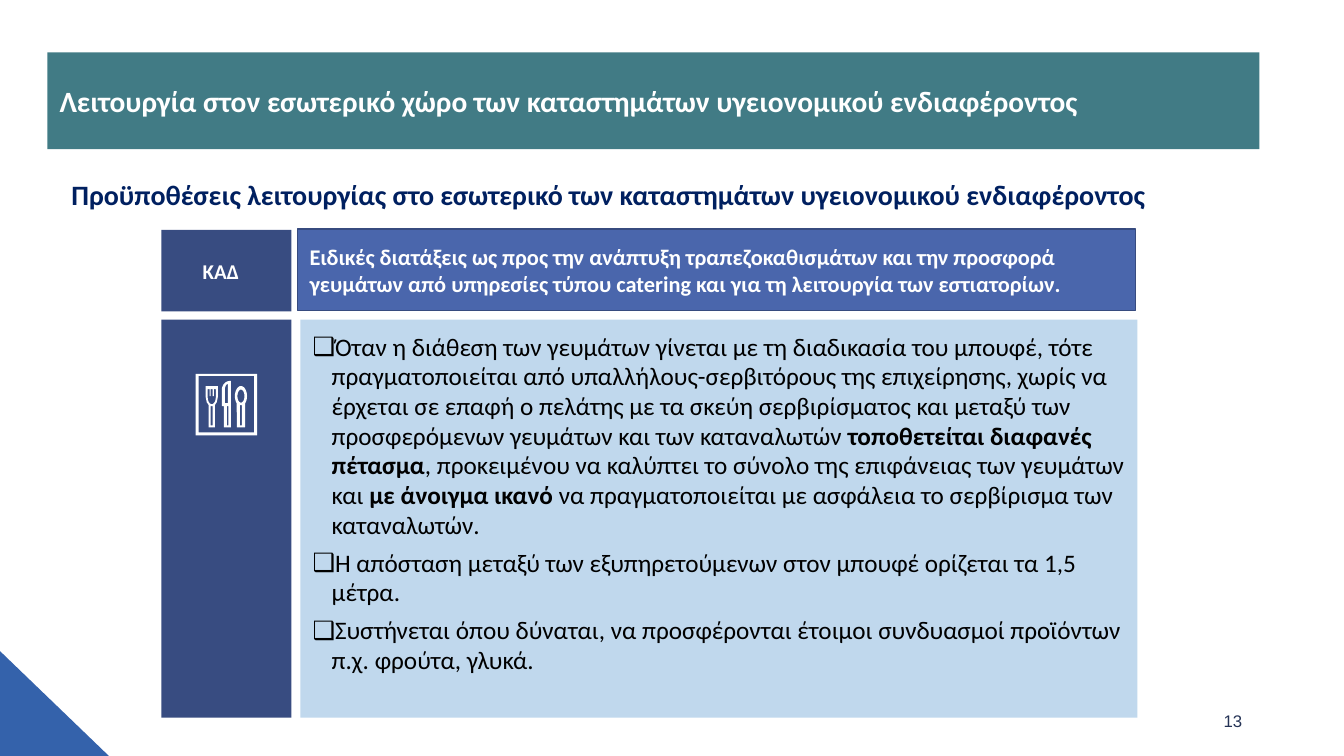
from math import cos, radians, sin

from lxml import etree
from pptx import Presentation, util as u
from pptx.dml.color import RGBColor
from pptx.enum import shapes, text
from pptx.oxml.ns import qn

WHITE, NAVY, DARK = "FFFFFF", "002060", "384C81"
TITLE = "Λειτουργία στον εσωτερικό χώρο των καταστημάτων υγειονομικού ενδιαφέροντος"
HEADING = "Προϋποθέσεις λειτουργίας στο εσωτερικό των καταστημάτων υγειονομικού ενδιαφέροντος"
RULES = ("Eιδικές διατάξεις ως προς την ανάπτυξη τραπεζοκαθισμάτων και την προσφορά "
         "γευμάτων από υπηρεσίες τύπου catering και για τη λειτουργία των εστιατορίων.")
# Text between asterisks is bold.
POINTS = [
    "Όταν η διάθεση των γευμάτων γίνεται με τη διαδικασία του μπουφέ, τότε "
    "πραγματοποιείται από υπαλλήλους-σερβιτόρους της επιχείρησης, χωρίς να έρχεται "
    "σε επαφή ο πελάτης με τα σκεύη σερβιρίσματος και μεταξύ των προσφερόμενων "
    "γευμάτων και των καταναλωτών *τοποθετείται διαφανές πέτασμα*, προκειμένου να "
    "καλύπτει το σύνολο της επιφάνειας των γευμάτων και *με άνοιγμα ικανό *να "
    "πραγματοποιείται με ασφάλεια το σερβίρισμα των καταναλωτών.",
    "Η απόσταση μεταξύ των εξυπηρετούμενων στον μπουφέ ορίζεται τα 1,5 μέτρα.",
    "Συστήνεται όπου δύναται, να προσφέρονται έτοιμοι συνδυασμοί προϊόντων "
    "π.χ. φρούτα, γλυκά.",
]


def paint(item, color):
    """Give a fill or font colour a solid hex value."""
    if hasattr(item, "solid"):
        item.solid()
        item.fore_color.rgb = RGBColor.from_string(color)
    else:
        item.color.rgb = RGBColor.from_string(color)


def place(shape, box):
    shape.left, shape.top, shape.width, shape.height = map(u.Inches, box)


def frame(shape, insets, anchor=text.MSO_ANCHOR.MIDDLE):
    """Set wrapping, margins and anchor, and return the text frame."""
    tf = shape.text_frame
    tf.word_wrap = True
    tf.auto_size = text.MSO_AUTO_SIZE.NONE
    tf.vertical_anchor = anchor
    tf.margin_left, tf.margin_top, tf.margin_right, tf.margin_bottom = map(u.Inches, insets)
    return tf


def style(para, size, color, bold=True, face="Calibri", align=text.PP_ALIGN.LEFT):
    para.alignment = align
    for run in para.runs:
        font = run.font
        font.name, font.size, font.bold = face, u.Pt(size), bold
        paint(font, color)


def write(shape, words, insets, size, color, **look):
    tf = frame(shape, insets)
    tf.text = words
    style(tf.paragraphs[0], size, color, **look)


def block(slide, box, color, kind=shapes.MSO_SHAPE.RECTANGLE, edge=None):
    shape = slide.shapes.add_shape(kind, *map(u.Inches, box))
    shape.shadow.inherit = False
    paint(shape.fill, color)
    if edge:
        paint(shape.line.fill, edge)
        shape.line.width = u.Pt(1)
    else:
        shape.line.fill.background()
    return shape


def label(slide, box, words, size, color, **look):
    shape = slide.shapes.add_textbox(*map(u.Inches, box))
    write(shape, words, (0.1, 0.05, 0.1, 0.05), size, color, **look)


def banner(title):
    place(title, (0.47, 0.52, 12.02, 0.96))
    geom = etree.SubElement(title._element.spPr, qn("a:prstGeom"), prst="snip2DiagRect")
    etree.SubElement(geom, qn("a:avLst"))
    paint(title.fill, "417B85")
    write(title, TITLE, (0.12, 0.02, 0.12, 0.02), 21, WHITE)


def bullet(para, mark):
    props = para._p.get_or_add_pPr()
    props.set("marL", str(u.Inches(0.19)))
    props.set("indent", str(u.Inches(-0.19)))
    etree.SubElement(props, qn("a:buFont"), typeface="Calibri")
    etree.SubElement(props, qn("a:buChar"), char=mark)


def checks(body):
    place(body, (2.98, 3.17, 8.3, 3.95))
    paint(body.fill, "C0D8ED")
    tf = frame(body, (0.12, 0.13, 0.08, 0.06), text.MSO_ANCHOR.TOP)
    for i, point in enumerate(POINTS):
        para = tf.add_paragraph() if i else tf.paragraphs[0]
        bullet(para, "❑")
        para.space_before = u.Pt(3 if i else 0)
        para.space_after = u.Pt(3)
        para.line_spacing = 0.98
        for part in point.split("*"):
            para.add_run().text = part
        style(para, 18, "000000", bold=False)
        for run in para.runs[1::2]:
            run.font.bold = True


def rect(left, top, right, bottom):
    return [(left, top), (right, top), (right, bottom), (left, bottom)]


def arc(x, y, wide, high, start, end):
    """Points along an ellipse, from one angle to another."""
    turns = [radians(start + (end - start) * i / 24) for i in range(25)]
    return [(x + wide * cos(t), y + high * sin(t)) for t in turns]


def outline(slide, *rings):
    """Draw a white form: its outer ring, then its holes."""
    rings = [[(u.Inches(x), u.Inches(y)) for x, y in ring] for ring in rings]
    pen = slide.shapes.build_freeform(*rings[0][0])
    for i, ring in enumerate(rings):
        if i:
            pen.move_to(*ring[0])
        pen.add_line_segments(ring[1:], close=True)
    form = pen.convert_to_shape()
    form.shadow.inherit = False
    paint(form.fill, WHITE)
    form.line.fill.background()


def cutlery(slide):
    outline(slide, rect(1.94, 3.71, 2.55, 4.32), rect(1.97, 3.73, 2.52, 4.29))
    # Spoon
    outline(slide, arc(2.39, 3.93, 0.06, 0.1, 135, 405) + [(2.43, 4.24), (2.35, 4.24)],
            arc(2.39, 3.93, 0.035, 0.065, 0, 360), rect(2.38, 4.02, 2.4, 4.22))
    # Knife
    outline(slide, arc(2.28, 3.87, 0.08, 0.09, 270, 180)
            + [(2.2, 4.03), (2.22, 4.03), (2.22, 4.24), (2.29, 4.24), (2.29, 3.78)],
            arc(2.26, 3.87, 0.03, 0.06, 270, 180) + [(2.23, 4), (2.26, 4)],
            rect(2.25, 4.03, 2.265, 4.22))
    # Fork
    tines = [(2.06, 3.86)]
    for x in (2.08, 2.11):
        tines += [(x, 3.86), (x, 3.93), (x + 0.01, 3.93), (x + 0.01, 3.86)]
    outline(slide, [(2.16, 3.83), (2.04, 3.83), (2.04, 3.94), (2.05, 3.99), (2.07, 4.02),
                    (2.07, 4.24), (2.13, 4.24), (2.13, 4.02), (2.15, 3.99), (2.16, 3.94)],
            arc(2.1, 3.94, 0.04, 0.07, 0, 180) + tines + [(2.14, 3.86)],
            rect(2.09, 4.03, 2.11, 4.22))


def main():
    deck = Presentation()
    deck.slide_width, deck.slide_height = u.Inches(13.33), u.Inches(7.5)
    slide = deck.slides.add_slide(deck.slide_layouts[1])
    title, body = slide.placeholders
    banner(title)
    checks(body)
    block(slide, (0, 6.46, 1.08, 1.04), "3462AB", shapes.MSO_SHAPE.RIGHT_TRIANGLE)
    label(slide, (9.42, 6.95, 3, 0.4), "13", 12, "253356",
          bold=False, face="Arial", align=text.PP_ALIGN.RIGHT)
    label(slide, (0.61, 1.71, 11.73, 0.44), HEADING, 20, NAVY)
    block(slide, (1.6, 3.17, 1.29, 3.95), DARK)
    rules = block(slide, (2.95, 2.27, 8.31, 0.81), "4A66AC", edge="374B7F")
    write(rules, RULES, (0.12, 0.06, 0.08, 0.06), 16, WHITE)
    code = block(slide, (1.6, 2.28, 1.29, 0.81), DARK)
    write(code, "ΚΑΔ", (0.41, 0.06, 0.06, 0.06), 15, WHITE)
    cutlery(slide)
    deck.save("out.pptx")


if __name__ == "__main__":
    main()
